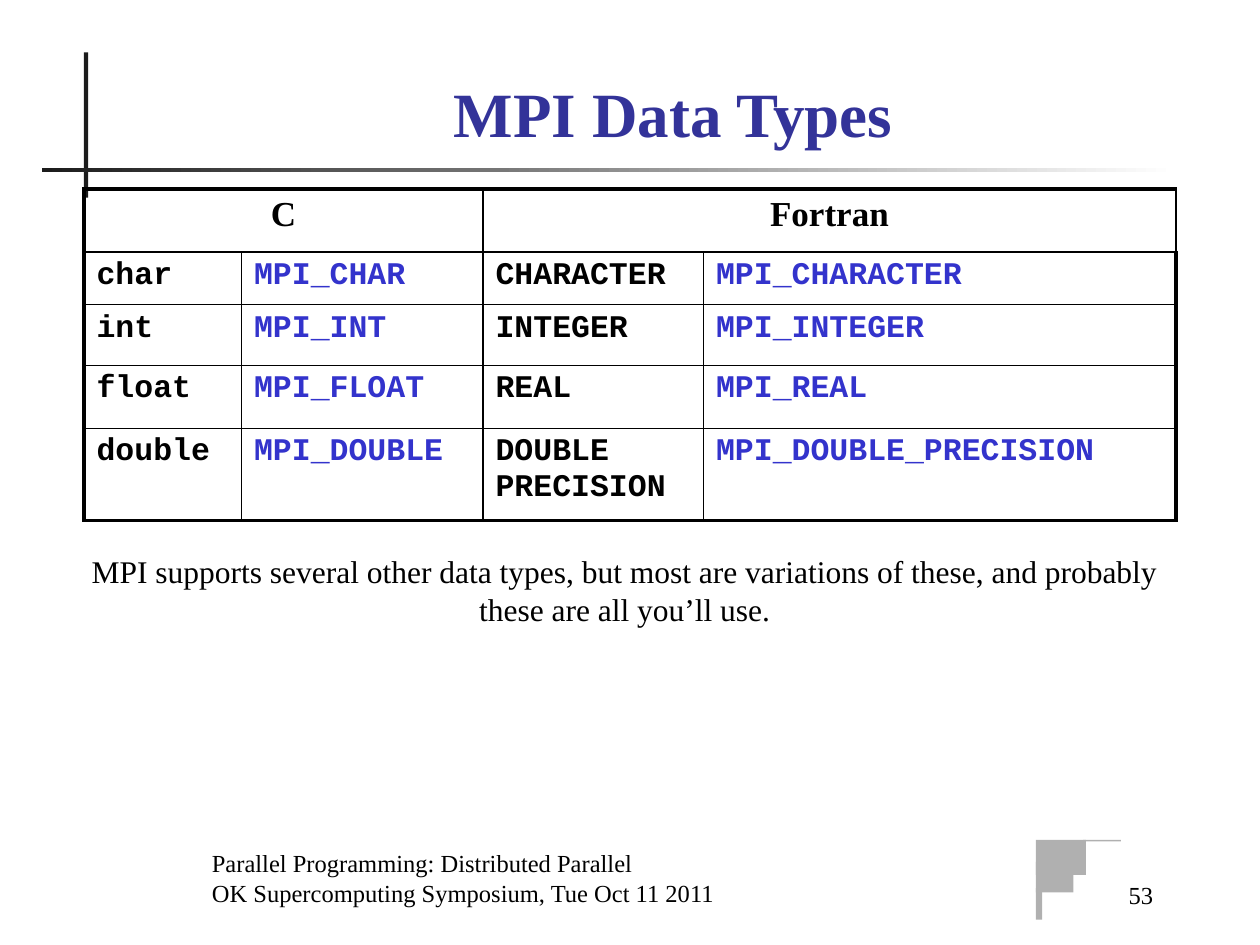
from lxml import etree
from pptx import Presentation
from pptx.dml.color import RGBColor
from pptx.enum.shapes import MSO_SHAPE
from pptx.enum.text import MSO_ANCHOR, PP_ALIGN
from pptx.oxml.ns import qn
from pptx.util import Pt

RECT = MSO_SHAPE.RECTANGLE
TOP, BOTTOM = MSO_ANCHOR.TOP, MSO_ANCHOR.BOTTOM
LEFT, CENTER, RIGHT = PP_ALIGN.LEFT, PP_ALIGN.CENTER, PP_ALIGN.RIGHT

# Content
TITLE = "MPI Data Types"
LANGUAGES = ["C", "Fortran"]
TYPES = [
    ("char", "MPI_CHAR", "CHARACTER", "MPI_CHARACTER"),
    ("int", "MPI_INT", "INTEGER", "MPI_INTEGER"),
    ("float", "MPI_FLOAT", "REAL", "MPI_REAL"),
    ("double", "MPI_DOUBLE", "DOUBLE PRECISION", "MPI_DOUBLE_PRECISION"),
]
REMARK = ("MPI supports several other data types, but most are variations of "
          "these, and probably these are all you’ll use.")
FOOTER = ["Parallel Programming: Distributed Parallel",
          "OK Supercomputing Symposium, Tue Oct 11 2011"]
PAGE_NUMBER = "53"

THEME = {
    "serif": "Times New Roman", "mono": "Courier New",
    "title": "333399", "ink": "000000", "mpi": "3333CC",
    "rule": "1C1C1C", "paper": "FFFFFF", "corner": "B0B0B0",
    "title_size": 36, "head_size": 20, "body_size": 18, "foot_size": 14,
    "thick": 2.25, "thin": 1,
}

# Geometry in points: left, top, width, height
TITLE_BOX = (78, 36, 613.5, 53.5)
VERTICAL_RULE = (48, 30, 2.4, 83)
HORIZONTAL_RULE = (24, 95.8, 648, 2.4)
CORNER_BLOCKS = [(592, 480, 28.5, 20), (592, 492.5, 21.5, 17.5),
                 (592, 507.5, 3.5, 18), (619, 480, 21.5, 0.8)]
TABLE_ORIGIN = (48, 108)
COLUMN_WIDTHS = [90, 138, 126, 270]
ROW_HEIGHTS = [36, 30, 34.8, 36, 52.5]
REMARK_BOX = (42, 312, 630, 65)
FOOTER_BOX = (114, 486, 438, 36)
NUMBER_BOX = (564, 487.5, 102, 36)


def colour(name):
    return RGBColor.from_string(THEME[name])


def points(box):
    return [Pt(length) for length in box]


def write(frame, lines, size="body_size", font="serif", ink="ink",
          bold=False, align=LEFT, anchor=TOP):
    frame.word_wrap = True
    frame.vertical_anchor = anchor
    for index, line in enumerate(lines):
        paragraph = frame.paragraphs[0] if index == 0 else frame.add_paragraph()
        paragraph.alignment = align
        run = paragraph.add_run()
        run.text = line
        run.font.name = THEME[font]
        run.font.size = Pt(THEME[size])
        run.font.bold = bold
        run.font.color.rgb = colour(ink)


def add_bar(slide, box, fill, fade_to=None):
    bar = slide.shapes.add_shape(RECT, *points(box))
    bar.shadow.inherit = False
    bar.line.fill.background()
    if fade_to:
        bar.fill.gradient()
        bar.fill.gradient_angle = 0
        for stop, name in zip(bar.fill.gradient_stops, (fill, fade_to)):
            stop.color.rgb = colour(name)
    else:
        bar.fill.solid()
        bar.fill.fore_color.rgb = colour(fill)


def add_text(slide, box, lines, **style):
    write(slide.shapes.add_textbox(*points(box)).text_frame, lines, **style)


def set_borders(cell, outer_sides):
    properties = cell._tc.get_or_add_tcPr()
    for position, side in enumerate("LRTB"):
        width = THEME["thick" if side in outer_sides else "thin"]
        line = etree.Element(qn(f"a:ln{side}"), w=str(Pt(width)))
        fill = etree.SubElement(line, qn("a:solidFill"))
        etree.SubElement(fill, qn("a:srgbClr"), val=THEME["ink"])
        properties.insert(position, line)


def add_type_table(slide):
    row_count, column_count = len(ROW_HEIGHTS), len(COLUMN_WIDTHS)
    size = (sum(COLUMN_WIDTHS), sum(ROW_HEIGHTS))
    table = slide.shapes.add_table(row_count, column_count,
                                   *points(TABLE_ORIGIN + size)).table
    table.first_row = table.horz_banding = False
    for column, width in zip(table.columns, COLUMN_WIDTHS):
        column.width = Pt(width)
    for row, height in zip(table.rows, ROW_HEIGHTS):
        row.height = Pt(height)

    # Thick frame, thin inner lines
    for r in range(row_count):
        for c in range(column_count):
            cell = table.cell(r, c)
            cell.fill.background()
            edges = {"L": c == 0, "R": c == column_count - 1,
                     "T": r == 0, "B": r == row_count - 1}
            set_borders(cell, [side for side in edges if edges[side]])

    # Each language heads a pair of columns
    for index, language in enumerate(LANGUAGES):
        heading = table.cell(0, 2 * index)
        heading.merge(table.cell(0, 2 * index + 1))
        write(heading.text_frame, [language], size="head_size", bold=True,
              align=CENTER)

    # Language type, then its MPI type
    for r, names in enumerate(TYPES, start=1):
        for c, name in enumerate(names):
            write(table.cell(r, c).text_frame, [name], font="mono", bold=True,
                  ink="mpi" if c % 2 else "ink")


def main():
    deck = Presentation()
    deck.slide_width, deck.slide_height = Pt(720), Pt(540)
    slide = deck.slides.add_slide(deck.slide_layouts[5])

    # Rules and corner ornament
    add_bar(slide, VERTICAL_RULE, "rule")
    add_bar(slide, HORIZONTAL_RULE, "rule", fade_to="paper")
    for block in CORNER_BLOCKS:
        add_bar(slide, block, "corner")

    # Title
    title = slide.shapes.title
    title.left, title.top, title.width, title.height = points(TITLE_BOX)
    write(title.text_frame, [TITLE], size="title_size", ink="title", bold=True,
          align=CENTER, anchor=BOTTOM)

    # Table, remark and footer
    add_type_table(slide)
    add_text(slide, REMARK_BOX, [REMARK], align=CENTER)
    add_text(slide, FOOTER_BOX, FOOTER, size="foot_size", anchor=BOTTOM)
    add_text(slide, NUMBER_BOX, [PAGE_NUMBER], size="foot_size", align=RIGHT,
             anchor=BOTTOM)

    deck.save("out.pptx")


if __name__ == "__main__":
    main()
